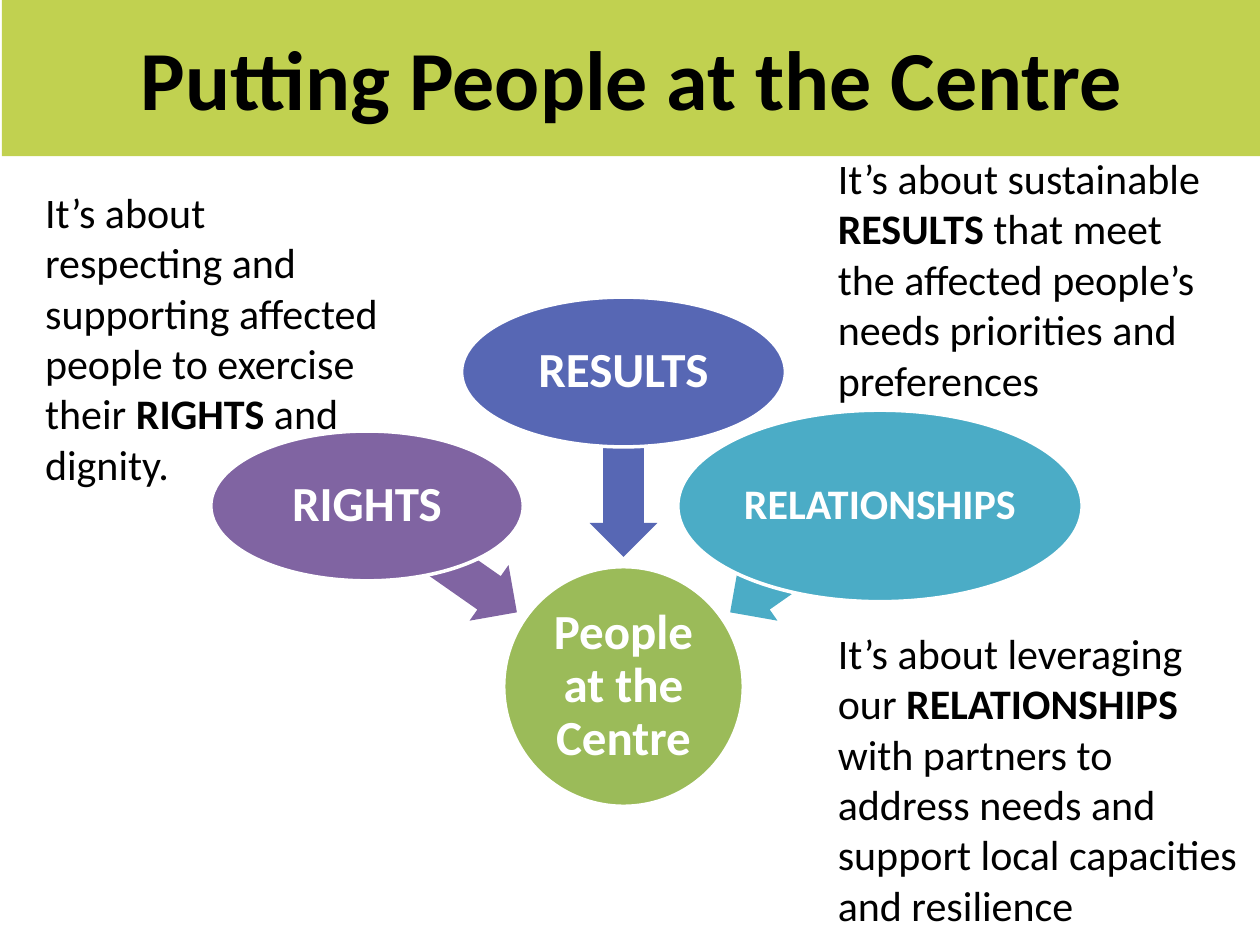
from pptx import Presentation
from pptx.dml.color import RGBColor
from pptx.enum.shapes import MSO_SHAPE as Shape
from pptx.enum.text import MSO_ANCHOR as Anchor, PP_ALIGN as Align
from pptx.util import Cm, Pt

FONT = "Calibri"
SPOKES = [
    (-1, "RIGHTS", 28, "8064A2", 6.3, 3.02),
    (0, "RESULTS", 28, "5767B4", 6.53, 3.02),
    (1, "RELATIONSHIPS", 24, "4BACC6", 8.15, 3.86),
]
NOTES = [
    (0.66, 3.63, 7.39, 6.4,
     "It’s about respecting and supporting affected people to exercise their ",
     "RIGHTS", " and dignity."),
    (16.64, 2.95, 8.05, 5.38, "It’s about sustainable ", "RESULTS",
     " that meet the affected people’s needs priorities and preferences"),
    (16.64, 12.52, 8.76, 6.4, "It’s about leveraging our ", "RELATIONSHIPS",
     " with partners to address needs and support local capacities and resilience"),
]


def paint(fill, color):
    """Give a fill or font colour format a solid hex colour."""
    fill.solid()
    fill.fore_color.rgb = RGBColor.from_string(color)


def set_font(p, size, color, bold=False):
    """Set the font of a whole paragraph."""
    p.font.name, p.font.size, p.font.bold = FONT, Pt(size), bold
    paint(p.font.fill, color)


def add_centred(slide, kind, cx, cy, width, height, color):
    """Add a flat filled shape around a centre given in centimetres."""
    sp = slide.shapes.add_shape(kind, Cm(cx - width / 2), Cm(cy - height / 2),
                                Cm(width), Cm(height))
    sp.shadow.inherit = False
    paint(sp.fill, color)
    sp.line.fill.background()
    return sp


def add_bubble(slide, cx, cy, width, height, color, text, size):
    """Add a white-edged ellipse with a bold label."""
    sp = add_centred(slide, Shape.OVAL, cx, cy, width, height, color)
    paint(sp.line.fill, "FFFFFF")
    sp.line.width = Pt(2)
    tf = sp.text_frame
    tf.word_wrap, tf.vertical_anchor = True, Anchor.MIDDLE
    tf.margin_left = tf.margin_right = tf.margin_top = tf.margin_bottom = Cm(0.05)
    p = tf.paragraphs[0]
    p.text, p.alignment, p.line_spacing = text, Align.CENTER, 0.9
    set_font(p, size, "FFFFFF", True)


def add_diagram(slide, left, top):
    """Draw the centre circle with three bubbles pointing at it."""
    mid = left + 8.33
    add_bubble(slide, mid, top + 7.85, 4.83, 4.83, "9BBB59", "People at the Centre", 28)
    for side, text, size, color, width, height in SPOKES:
        arrow_y, bubble_y = (5.29, 4.21) if side else (3.38, 1.51)
        sp = add_centred(slide, Shape.LEFT_ARROW, mid + side * 3.67, top + arrow_y,
                         3.71, 1.37, color)
        sp.adjustments[0], sp.adjustments[1] = 0.6, 0.5
        sp.rotation = 270 + side * 55
        add_bubble(slide, mid + side * 5.17, top + bubble_y, width, height,
                   color, text, size)


def add_note(slide, left, top, width, height, before, key, after):
    """Write one explanation with its key word in bold."""
    sp = slide.shapes.add_textbox(Cm(left), Cm(top), Cm(width), Cm(height))
    tf = sp.text_frame
    tf.word_wrap = True
    p = tf.paragraphs[0]
    set_font(p, 24, "000000")
    for text in (before, key, after):
        r = p.add_run()
        r.text = text
        r.font.bold = text == key


def add_title(slide, left, top, width, height, text):
    """Turn the title placeholder into the banner."""
    sp = slide.shapes.title
    sp.left, sp.top, sp.width, sp.height = Cm(left), Cm(top), Cm(width), Cm(height)
    paint(sp.fill, "C1D150")
    tf = sp.text_frame
    tf.text, tf.vertical_anchor = text, Anchor.MIDDLE
    p = tf.paragraphs[0]
    p.alignment = Align.CENTER
    set_font(p, 48, "000000", True)


def main():
    """Build and save the slide."""
    prs = Presentation()
    prs.slide_width, prs.slide_height = Cm(25.4), Cm(19.05)
    s = prs.slides.add_slide(prs.slide_layouts[5])
    add_title(s, 0.04, -0.03, 25.4, 3.18, "Putting People at the Centre")
    add_diagram(s, 4.24, 5.99)
    for note in NOTES:
        add_note(s, *note)
    prs.save("out.pptx")


if __name__ == "__main__":
    main()
